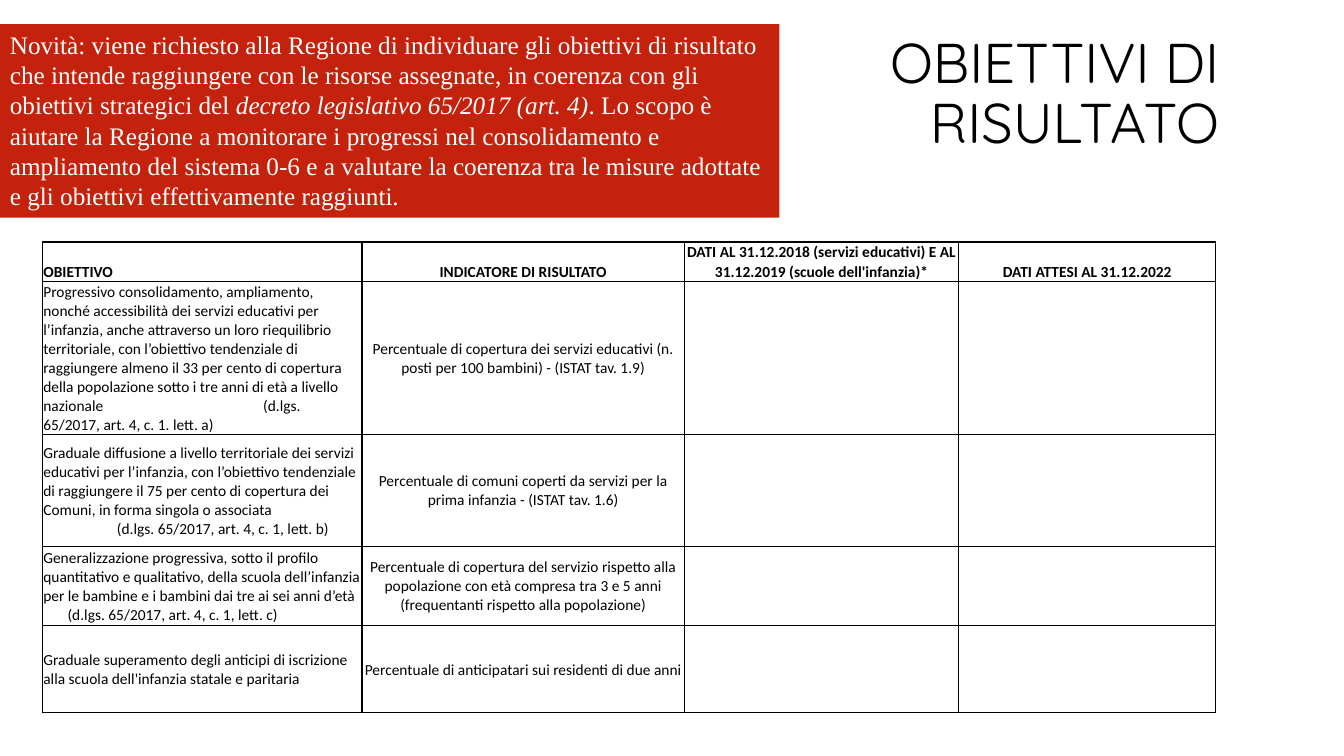
from lxml import etree
from pptx import Presentation
from pptx.dml.color import RGBColor
from pptx.enum import shapes, text
from pptx.oxml.ns import qn
from pptx.util import Inches, Pt

COLORS = {"red": "C4220D", "black": "000000", "white": "FFFFFF"}

TITLE = "OBIETTIVI DI RISULTATO"

# Notice runs: text, italic
NOTICE = [
    ("Novità: viene richiesto alla Regione di individuare gli obiettivi di risultato che intende "
     "raggiungere con le risorse assegnate, in coerenza con gli obiettivi strategici del ", False),
    ("decreto legislativo 65/2017 (art. 4)", True),
    (". Lo scopo è aiutare la Regione a monitorare i progressi nel consolidamento e ampliamento del "
     "sistema 0-6 e a valutare la coerenza tra le misure adottate e gli obiettivi effettivamente "
     "raggiunti.", False),
]

HEADERS = [
    "OBIETTIVO",
    "INDICATORE DI RISULTATO",
    "DATI AL 31.12.2018 (servizi educativi) E AL 31.12.2019 (scuole dell'infanzia)*",
    "DATI ATTESI AL 31.12.2022",
]

# Goal, indicator, tab stop of the legal reference in inches
GOALS = [
    ("Progressivo consolidamento, ampliamento, nonché accessibilità dei servizi educativi per "
     "l’infanzia, anche attraverso un loro riequilibrio territoriale, con l’obiettivo tendenziale di "
     "raggiungere almeno il 33 per cento di copertura della popolazione sotto i tre anni di età a "
     "livello nazionale\t(d.lgs.\v65/2017, art. 4, c. 1. lett. a)",
     "Percentuale di copertura dei servizi educativi (n. posti per 100 bambini) - (ISTAT tav. 1.9)",
     2.18),
    ("Graduale diffusione a livello territoriale dei servizi educativi per l’infanzia, con "
     "l’obiettivo tendenziale di raggiungere il 75 per cento di copertura dei Comuni, in forma "
     "singola o associata\v\t(d.lgs. 65/2017, art. 4, c. 1, lett. b)",
     "Percentuale di comuni coperti da servizi per la prima infanzia - (ISTAT tav. 1.6)",
     0.73),
    ("Generalizzazione progressiva, sotto il profilo quantitativo e qualitativo, della scuola "
     "dell’infanzia per le bambine e i bambini dai tre ai sei anni d’età"
     "\v\t(d.lgs. 65/2017, art. 4, c. 1, lett. c)",
     "Percentuale di copertura del servizio rispetto alla popolazione con età compresa tra 3 e 5 "
     "anni (frequentanti rispetto alla popolazione)",
     0.24),
    ("Graduale superamento degli anticipi di iscrizione alla scuola dell'infanzia statale e paritaria",
     "Percentuale di anticipatari sui residenti di due anni",
     None),
]

COLUMN_WIDTHS = [3.17, 3.2, 2.72, 2.55]
ROW_HEIGHTS = [0.39, 1.52, 1.11, 0.79, 0.86]


def color(name):
    return RGBColor.from_string(COLORS[name])


def set_font(font, name, size, color_name, bold=False):
    font.name, font.size, font.bold = name, Pt(size), bold
    font.color.rgb = color(color_name)


def add_borders(cell):
    properties = cell._tc.get_or_add_tcPr()
    for side in ("lnL", "lnR", "lnT", "lnB"):
        line = etree.SubElement(properties, qn(f"a:{side}"), w=str(Pt(1)))
        fill = etree.SubElement(line, qn("a:solidFill"))
        etree.SubElement(fill, qn("a:srgbClr"), val=COLORS["black"])


def add_tab_stop(paragraph, position):
    tabs = etree.SubElement(paragraph._p.get_or_add_pPr(), qn("a:tabLst"))
    etree.SubElement(tabs, qn("a:tab"), pos=str(Inches(position)), algn="l")


presentation = Presentation()
presentation.slide_width, presentation.slide_height = Inches(13.33), Inches(7.5)
slide = presentation.slides.add_slide(presentation.slide_layouts[6])

# Title
title = slide.shapes.add_textbox(Inches(8.51), Inches(0.24), Inches(3.68), Inches(1.41))
frame = title.text_frame
frame.word_wrap = True
frame.vertical_anchor = text.MSO_ANCHOR.MIDDLE
paragraph = frame.paragraphs[0]
paragraph.text = TITLE
paragraph.alignment = text.PP_ALIGN.RIGHT
paragraph.line_spacing = 0.9
set_font(paragraph.font, "Quicksand", 40, "black")

# Goals table
table = slide.shapes.add_table(
    len(ROW_HEIGHTS), len(COLUMN_WIDTHS), Inches(0.42), Inches(2.4),
    Inches(sum(COLUMN_WIDTHS)), Inches(sum(ROW_HEIGHTS))).table
for column, width in zip(table.columns, COLUMN_WIDTHS):
    column.width = Inches(width)
for row, height in zip(table.rows, ROW_HEIGHTS):
    row.height = Inches(height)

rows = [(HEADERS, None)] + [([goal, indicator, "", ""], tab) for goal, indicator, tab in GOALS]
for row_index, (contents, tab) in enumerate(rows):
    for column_index, content in enumerate(contents):
        cell = table.cell(row_index, column_index)
        add_borders(cell)
        cell.fill.background()
        cell.margin_left = cell.margin_right = cell.margin_top = Inches(0.01)
        cell.margin_bottom = 0
        at_bottom = row_index == 0 or (row_index, column_index) == (1, 0)
        cell.vertical_anchor = text.MSO_ANCHOR.BOTTOM if at_bottom else text.MSO_ANCHOR.MIDDLE
        cell.text = content
        paragraph = cell.text_frame.paragraphs[0]
        paragraph.alignment = text.PP_ALIGN.CENTER if column_index else text.PP_ALIGN.LEFT
        if tab and column_index == 0:
            add_tab_stop(paragraph, tab)
        set_font(paragraph.font, "Calibri", 11, "black", bold=row_index == 0)

# Red notice
notice = slide.shapes.add_shape(
    shapes.MSO_SHAPE.RECTANGLE, 0, Inches(0.24), Inches(7.73), Inches(1.92))
notice.shadow.inherit = False
notice.fill.solid()
notice.fill.fore_color.rgb = color("red")
notice.line.fill.background()
frame = notice.text_frame
frame.word_wrap = True
frame.auto_size = text.MSO_AUTO_SIZE.SHAPE_TO_FIT_TEXT
frame.vertical_anchor = text.MSO_ANCHOR.TOP
paragraph = frame.paragraphs[0]
paragraph.alignment = text.PP_ALIGN.LEFT
set_font(paragraph.font, "Times New Roman", 18, "white")
for content, italic in NOTICE:
    run = paragraph.add_run()
    run.text = content
    run.font.italic = italic

presentation.save("out.pptx")
